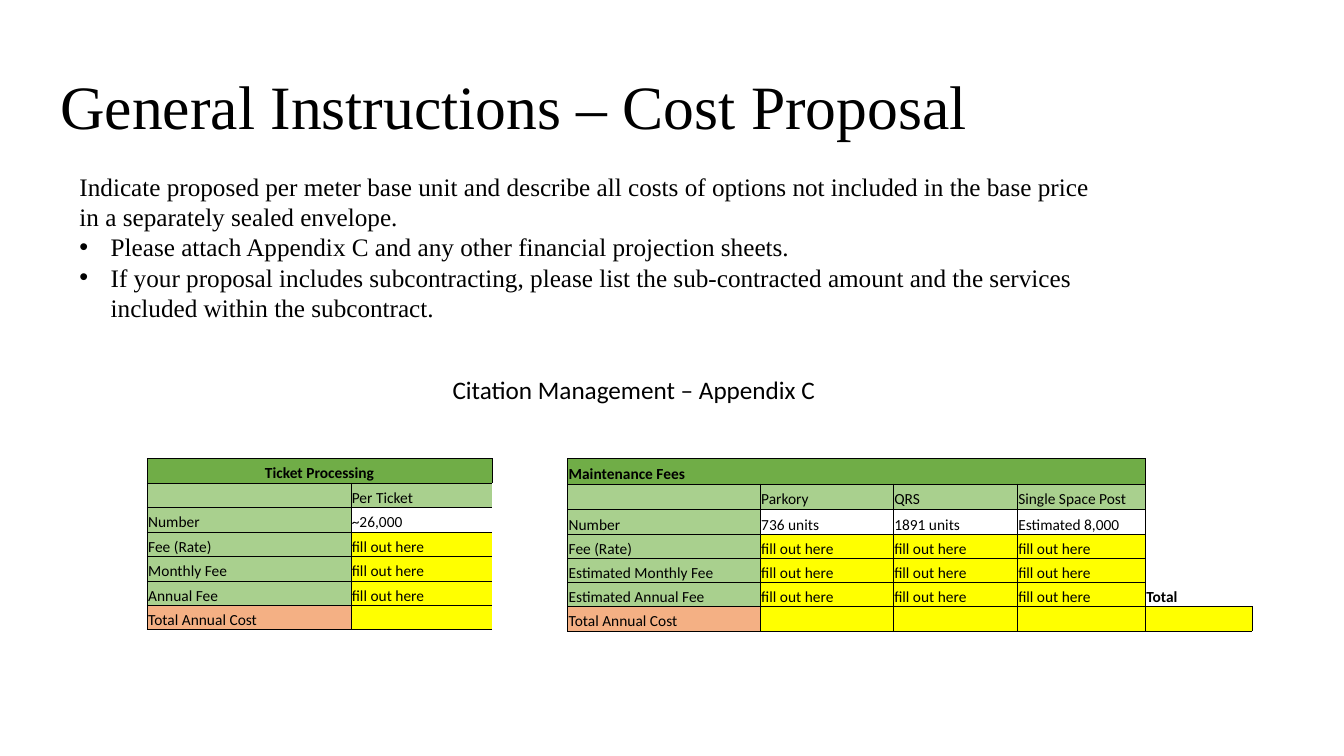
from lxml import etree
from pptx import Presentation, util as u
from pptx.dml.color import RGBColor
from pptx.enum import text
from pptx.oxml import ns

SERIF, SANS = "Times New Roman", "Calibri"
TITLE = ["General Instructions – Cost Proposal"]
BODY = [
    "Indicate proposed per meter base unit and describe all costs of options "
    "not included in the base price in a separately sealed envelope.",
    "• Please attach Appendix C and any other financial projection sheets.",
    "• If your proposal includes subcontracting, please list the sub-contracted "
    "amount and the services included within the subcontract.",
]
HEAD = ["Citation Management – Appendix C"]
FILLS = {"D": "70AD47", "G": "A9D08E", "Y": "FFFF00", "O": "F4B084", "W": "FFFFFF"}
ASK = "fill out here"
TICKET = {
    "place": (1.46, 4.55), "cols": (2.02, 1.4), "rows": [1.7 / 7] * 7, "span": True,
    "cells": [
        ("DD", ["Ticket Processing", ""]),
        ("GG", ["", "Per Ticket"]),
        ("G-", ["Number", "~26,000"]),
        ("GY", ["Fee (Rate)", ASK]),
        ("GY", ["Monthly Fee", ASK]),
        ("GY", ["Annual Fee", ASK]),
        ("OY", ["Total Annual Cost", ""]),
    ],
    "edges": [["lrtb"] * 2] + [["lrtb", "ltb"]] * 6,
}
GRID = ["lrtb"] * 4
UPKEEP = {
    "place": (5.63, 4.55), "cols": (1.91, 1.32, 1.23, 1.27, 1.06),
    "rows": [0.25] * 3 + [0.24] * 4, "span": False,
    "cells": [
        ("DDDD-", ["Maintenance Fees", "", "", "", ""]),
        ("GGGG-", ["", "Parkory", "QRS", "Single Space Post", ""]),
        ("G--W-", ["Number", "736 units", "1891 units", "Estimated 8,000", ""]),
        ("GYYY-", ["Fee (Rate)", ASK, ASK, ASK, ""]),
        ("GYYY-", ["Estimated Monthly Fee", ASK, ASK, ASK, ""]),
        ("GYYY-", ["Estimated Annual Fee", ASK, ASK, ASK, "Total"]),
        ("OYYYY", ["Total Annual Cost", "", "", "", ""]),
    ],
    "edges": [["ltb", "tb", "tb", "trb", "l"]] + [GRID + ["l"]] * 4
    + [GRID + ["lb"], GRID + ["lrtb"]],
}


def paint(fill, code):
    fill.solid()
    fill.fore_color.rgb = RGBColor.from_string(code)


def style(font, size, name, bold=False):
    for key, val in {"size": u.Pt(size), "name": name, "bold": bold}.items():
        setattr(font, key, val)
    paint(font.fill, "000000")


def add_text(slide, place, lines, size, name, anchor="TOP", lead=1.0):
    frame = slide.shapes.add_textbox(*map(u.Inches, place)).text_frame
    frame.word_wrap = True
    frame.vertical_anchor = text.MSO_ANCHOR[anchor]
    for i, line in enumerate(lines):
        para = frame.add_paragraph() if i else frame.paragraphs[0]
        para.line_spacing = lead
        run = para.add_run()
        run.text = line.removeprefix("• ")
        style(run.font, size, name)
        if line.startswith("•"):
            props = para._p.get_or_add_pPr()
            props.set("marL", str(u.Inches(0.31)))
            props.set("indent", str(-u.Inches(0.31)))
            etree.SubElement(props, ns.qn("a:buFont"), typeface="Arial")
            etree.SubElement(props, ns.qn("a:buChar"), char="•")


def add_edges(cell, sides):
    props = cell._tc.get_or_add_tcPr()
    for side in "lrtb":
        line = etree.SubElement(props, ns.qn("a:ln" + side.upper()), w=str(u.Pt(0.5)))
        if side in sides:
            solid = etree.SubElement(line, ns.qn("a:solidFill"))
            etree.SubElement(solid, ns.qn("a:srgbClr"), val="000000")
        else:
            etree.SubElement(line, ns.qn("a:noFill"))


def fill_cell(cell, words, code, sides, bold):
    for key, val in {"left": 0.01, "right": 0.01, "top": 0.01, "bottom": 0}.items():
        setattr(cell, "margin_" + key, u.Inches(val))
    cell.vertical_anchor = text.MSO_ANCHOR.BOTTOM
    add_edges(cell, sides)
    if code in FILLS:
        paint(cell.fill, FILLS[code])
    else:
        cell.fill.background()
    para = cell.text_frame.paragraphs[0]
    if words:
        run = para.add_run()
        run.text = words
        style(run.font, 11, SANS, bold)
    else:
        etree.SubElement(para._p, ns.qn("a:endParaRPr"), sz="1100")


def add_grid(slide, data):
    cols, rows = data["cols"], data["rows"]
    size = data["place"] + (sum(cols), sum(rows))
    table = slide.shapes.add_table(len(rows), len(cols), *map(u.Inches, size)).table
    table.first_row = table.horz_banding = False
    for col, wide in zip(table.columns, cols):
        col.width = u.Inches(wide)
    for row, high in zip(table.rows, rows):
        row.height = u.Inches(high)
    for r, (codes, words) in enumerate(data["cells"]):
        for c, word in enumerate(words):
            bold = r == 0 or word == "Total"
            fill_cell(table.cell(r, c), word, codes[c], data["edges"][r][c], bold)
    if data["span"]:
        top = table.cell(0, 0)
        top.merge(table.cell(0, len(cols) - 1))
        top.text_frame.paragraphs[0].alignment = text.PP_ALIGN.CENTER


def main():
    deck = Presentation()
    deck.slide_width, deck.slide_height = u.Inches(13.33), u.Inches(7.5)
    slide = deck.slides.add_slide(deck.slide_layouts[6])
    add_text(slide, (0.5, 0.36, 11.5, 1.45), TITLE, 44, SERIF, "MIDDLE", 0.9)
    add_text(slide, (0.69, 1.65, 10.4, 1.62), BODY, 18, SERIF)
    add_grid(slide, TICKET)
    add_text(slide, (4.39, 3.66, 4.56, 0.4), HEAD, 18, SANS)
    add_grid(slide, UPKEEP)
    deck.save("out.pptx")


if __name__ == "__main__":
    main()
